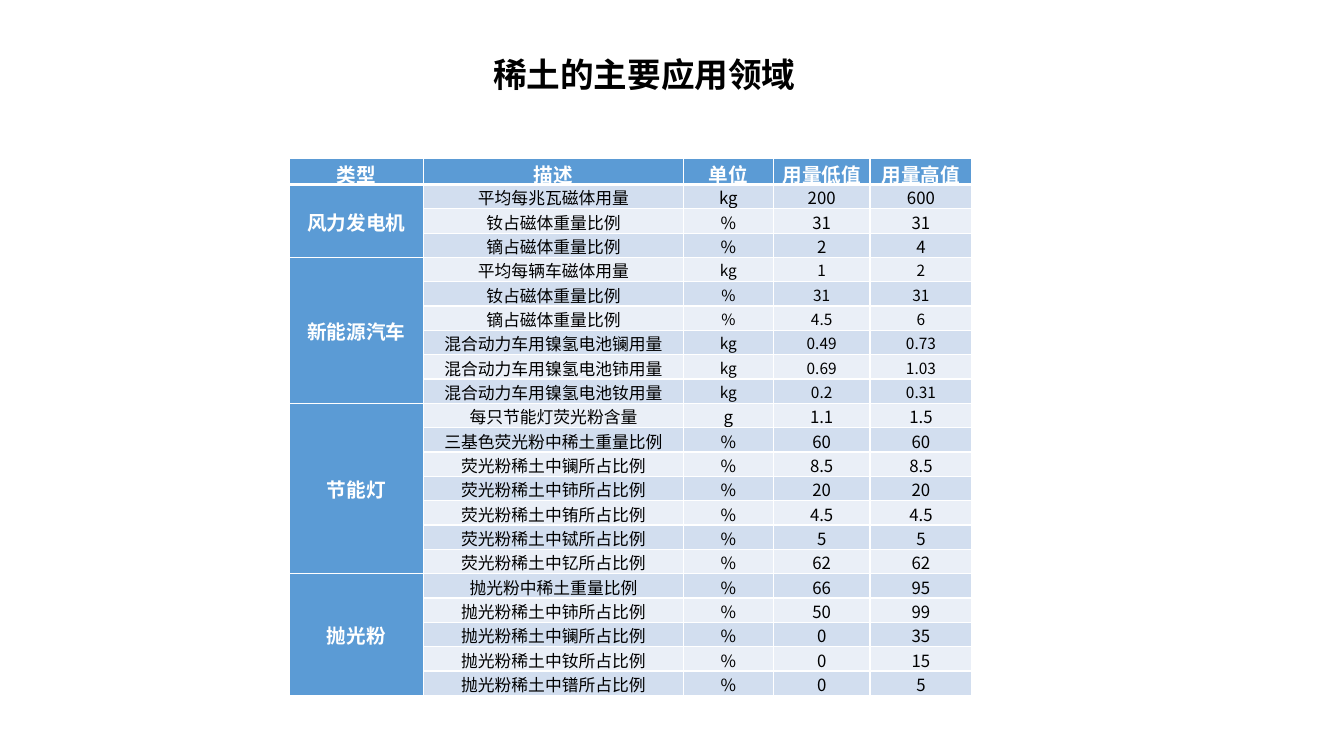
from lxml import etree
from pptx import Presentation
from pptx.dml.color import RGBColor
from pptx.enum.text import MSO_ANCHOR, MSO_AUTO_SIZE, PP_ALIGN
from pptx.oxml.ns import qn
from pptx.util import Inches, Pt

MIDDLE = MSO_ANCHOR.MIDDLE
TOP = MSO_ANCHOR.TOP
CENTER = PP_ALIGN.CENTER
LEFT = PP_ALIGN.LEFT
GROW = MSO_AUTO_SIZE.SHAPE_TO_FIT_TEXT

BLACK = RGBColor(0x00, 0x00, 0x00)
WHITE = RGBColor(0xFF, 0xFF, 0xFF)
BLUE = RGBColor(0x5B, 0x9B, 0xD5)
BANDS = (RGBColor(0xEA, 0xEF, 0xF7), RGBColor(0xD2, 0xDE, 0xEF))

HEADS = ("类型", "描述", "单位", "用量低值", "用量高值")
WIDTHS = (1.33, 2.58, 0.89, 0.96, 1.01)
HEIGHT = 5.33
HEAD_H = 0.26
GROUPS = (
    ("风力发电机", 12, (
        ("平均每兆瓦磁体用量", "kg", "200", "600"),
        ("钕占磁体重量比例", "%", "31", "31"),
        ("镝占磁体重量比例", "%", "2", "4"),
    )),
    ("新能源汽车", 11, (
        ("平均每辆车磁体用量", "kg", "1", "2"),
        ("钕占磁体重量比例", "%", "31", "31"),
        ("镝占磁体重量比例", "%", "4.5", "6"),
        ("混合动力车用镍氢电池镧用量", "kg", "0.49", "0.73"),
        ("混合动力车用镍氢电池铈用量", "kg", "0.69", "1.03"),
        ("混合动力车用镍氢电池钕用量", "kg", "0.2", "0.31"),
    )),
    ("节能灯", 12, (
        ("每只节能灯荧光粉含量", "g", "1.1", "1.5"),
        ("三基色荧光粉中稀土重量比例", "%", "60", "60"),
        ("荧光粉稀土中镧所占比例", "%", "8.5", "8.5"),
        ("荧光粉稀土中铈所占比例", "%", "20", "20"),
        ("荧光粉稀土中铕所占比例", "%", "4.5", "4.5"),
        ("荧光粉稀土中铽所占比例", "%", "5", "5"),
        ("荧光粉稀土中钇所占比例", "%", "62", "62"),
    )),
    ("抛光粉", 12, (
        ("抛光粉中稀土重量比例", "%", "66", "95"),
        ("抛光粉稀土中铈所占比例", "%", "50", "99"),
        ("抛光粉稀土中镧所占比例", "%", "0", "35"),
        ("抛光粉稀土中钕所占比例", "%", "0", "15"),
        ("抛光粉稀土中镨所占比例", "%", "0", "5"),
    )),
)


def set_font(para, name, size, color, bold):
    font = para.font
    font.name = name
    font.size = Pt(size)
    font.bold = bold
    font.color.rgb = color
    props = para._p.get_or_add_pPr().get_or_add_defRPr()
    etree.SubElement(props, qn("a:ea"), typeface=name)


def set_edges(cell, base):
    props = cell._tc.get_or_add_tcPr()
    for i, (side, width) in enumerate(zip("LRTB", (1, 1, 1, base))):
        line = etree.Element(qn("a:ln" + side), w=str(Pt(width)))
        fill = etree.SubElement(line, qn("a:solidFill"))
        etree.SubElement(fill, qn("a:srgbClr"), val=str(WHITE))
        props.insert(i, line)


def fill_cell(cell, text, size, color, back, bold=False, base=1):
    cell.text = text
    cell.vertical_anchor = MIDDLE
    cell.margin_left = cell.margin_right = cell.margin_top = Inches(0.01)
    cell.margin_bottom = 0
    cell.fill.solid()
    cell.fill.fore_color.rgb = back
    para = cell.text_frame.paragraphs[0]
    para.alignment = CENTER
    set_font(para, "Noto Sans CJK SC", size, color, bold)
    set_edges(cell, base)


def add_title(slide, text):
    title = slide.shapes.title
    title.left, title.top = Inches(4.79), Inches(0.48)
    title.width, title.height = Inches(3.25), Inches(0.51)
    frame = title.text_frame
    frame.text = text
    frame.word_wrap = False
    frame.auto_size = GROW
    frame.vertical_anchor = TOP
    para = frame.paragraphs[0]
    para.alignment = LEFT
    set_font(para, "Lato", 24, BLACK, True)


def add_usage(slide):
    count = sum(len(items) for _, _, items in GROUPS)
    table = slide.shapes.add_table(
        count + 1, len(HEADS), Inches(2.87), Inches(1.57),
        Inches(sum(WIDTHS)), Inches(HEIGHT)).table
    for col, width in zip(table.columns, WIDTHS):
        col.width = Inches(width)
    for row in table.rows:
        row.height = Inches((HEIGHT - HEAD_H) / count)
    table.rows[0].height = Inches(HEAD_H)
    for c, head in enumerate(HEADS):
        fill_cell(table.cell(0, c), head, 14, WHITE, BLUE, True, 3)
    top = 1
    for name, size, items in GROUPS:
        for r, item in enumerate(items, top):
            fill_cell(table.cell(r, 0), name if r == top else "",
                      14 if r == top else 12, WHITE, BLUE, True)
            for c, text in enumerate(item, 1):
                fill_cell(table.cell(r, c), text, 12 if c == 1 else size,
                          BLACK, BANDS[r % 2])
        last = top + len(items) - 1
        table.cell(top, 0).merge(table.cell(last, 0))
        top = last + 1


def main():
    deck = Presentation()
    deck.slide_width, deck.slide_height = Inches(13.33), Inches(7.5)
    slide = deck.slides.add_slide(deck.slide_layouts[5])
    add_title(slide, "稀土的主要应用领域")
    add_usage(slide)
    deck.save("out.pptx")


if __name__ == "__main__":
    main()
